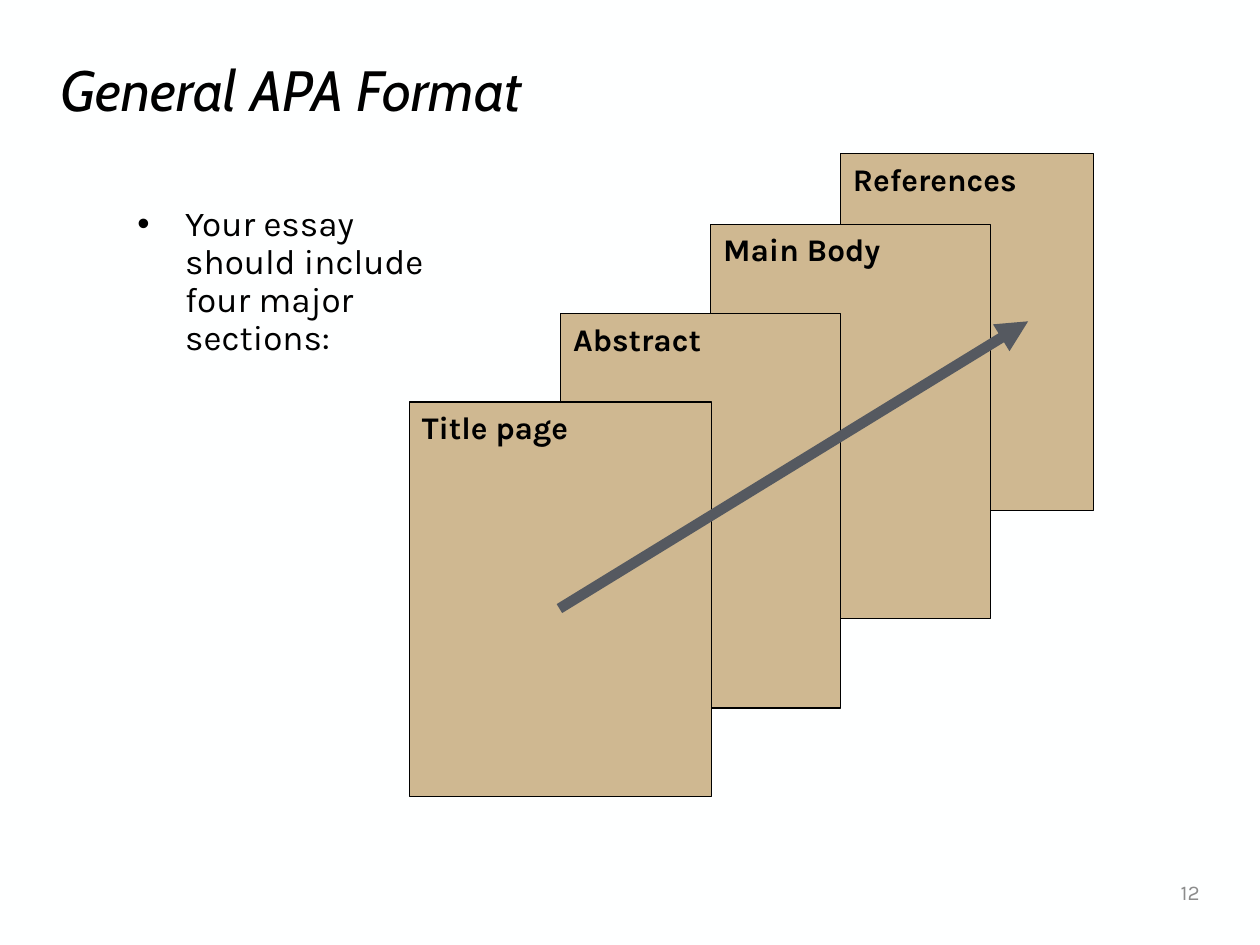
import pptx
import pptx.dml.color
import pptx.enum.shapes
import pptx.enum.text
import pptx.oxml
import pptx.oxml.ns
import pptx.util
from lxml import etree

COLORS = {
    "background": "FEFFFF",
    "ink": "000000",
    "page": "CFB891",
    "arrow": "555960",
    "number": "8C8C8C",
}
BODY_FONT = "Karla"
TITLE_FONT = "Cabin"
CELL = pptx.util.Inches(0.1)
COLUMNS, ROWS = 100, 75
PAGES = [
    ("References", 34.2, 0, 20.1, 28.3),
    ("Main Body", 23.9, 5.6, 22.2, 31.3),
    ("Abstract", 12, 12.7, 22.2, 31.3),
    ("Title page", 0, 19.7, 24, 31.3),
]


def cells(*counts):
    return [round(count * CELL) for count in counts]


def color(name):
    return pptx.dml.color.RGBColor.from_string(COLORS[name])


def add_element(parent, tag, **attributes):
    return etree.SubElement(parent, pptx.oxml.ns.qn(tag), **attributes)


def write(paragraph, words, size, ink="ink", font=BODY_FONT, bold=False, italic=False):
    run = paragraph.add_run()
    run.text = words
    run.font.name = font
    run.font.size = pptx.util.Pt(size)
    run.font.bold = bold
    run.font.italic = italic
    run.font.color.rgb = color(ink)


def place(holder, box):
    holder.left, holder.top, holder.width, holder.height = cells(*box)
    holder.text_frame.word_wrap = True
    holder.text_frame.auto_size = pptx.enum.text.MSO_AUTO_SIZE.NONE


def add_heading(slide, box):
    heading = slide.shapes.title
    place(heading, box)
    heading.text_frame.vertical_anchor = pptx.enum.text.MSO_ANCHOR.MIDDLE
    paragraph = heading.text_frame.paragraphs[0]
    paragraph.alignment = pptx.enum.text.PP_ALIGN.LEFT
    paragraph.line_spacing = 0.9
    write(paragraph, "General APA Format", 32.4, font=TITLE_FONT, italic=True)


def add_introduction(slide, box):
    introduction = slide.placeholders[1]
    place(introduction, box)
    introduction.text_frame.vertical_anchor = pptx.enum.text.MSO_ANCHOR.TOP
    paragraph = introduction.text_frame.paragraphs[0]
    paragraph.line_spacing = 0.9
    paragraph.space_before = pptx.util.Pt(0)
    properties = paragraph._p.get_or_add_pPr()
    indent = cells(3.8)[0]
    properties.set("marL", str(indent))
    properties.set("indent", str(-indent))
    add_element(properties, "a:buFont", typeface="Arial")
    add_element(properties, "a:buChar", char="•")
    write(paragraph, "Your essay should include four major sections:", 20)


def add_page(slide, label, box):
    page = slide.shapes.add_shape(pptx.enum.shapes.MSO_SHAPE.RECTANGLE, *cells(*box))
    page.shadow.inherit = False
    page.fill.solid()
    page.fill.fore_color.rgb = color("page")
    page.line.color.rgb = color("ink")
    page.line.width = pptx.util.Pt(0.75)
    page.text_frame.word_wrap = True
    page.text_frame.vertical_anchor = pptx.enum.text.MSO_ANCHOR.TOP
    paragraph = page.text_frame.paragraphs[0]
    paragraph.alignment = pptx.enum.text.PP_ALIGN.LEFT
    write(paragraph, label, 18, bold=True)


def add_arrow(slide, start, end):
    arrow = slide.shapes.add_connector(
        pptx.enum.shapes.MSO_CONNECTOR.STRAIGHT, *cells(*start, *end)
    )
    arrow.line.color.rgb = color("arrow")
    arrow.line.width = pptx.util.Pt(6)
    add_element(arrow.line._get_or_add_ln(), "a:tailEnd", type="triangle")
    add_element(arrow._element.spPr, "a:effectLst")


def add_page_stack(slide, left, top):
    for label, column, row, width, height in PAGES:
        add_page(slide, label, (left + column, top + row, width, height))
    add_arrow(slide, (left + 11.9, top + 36.1), (left + 49.1, top + 13.3))


def add_slide_number(slide, box):
    number = slide.shapes.add_textbox(*cells(*box))
    number.text_frame.word_wrap = True
    number.text_frame.vertical_anchor = pptx.enum.text.MSO_ANCHOR.MIDDLE
    paragraph = number.text_frame.paragraphs[0]
    paragraph.alignment = pptx.enum.text.PP_ALIGN.RIGHT
    write(paragraph, "12", 12, ink="number")


def main():
    deck = pptx.Presentation()
    deck.slide_width, deck.slide_height = cells(COLUMNS, ROWS)
    slide = deck.slides.add_slide(deck.slide_layouts[1])
    slide.background.fill.solid()
    slide.background.fill.fore_color.rgb = color("background")
    add_heading(slide, (3.8, 4.2, 92.4, 6.4))
    add_introduction(slide, (9.9, 15.9, 28.6, 12.4))
    add_page_stack(slide, 32.5, 12.2)
    add_slide_number(slide, (84.2, 68.8, 12, 4))
    deck.save("out.pptx")


if __name__ == "__main__":
    main()
